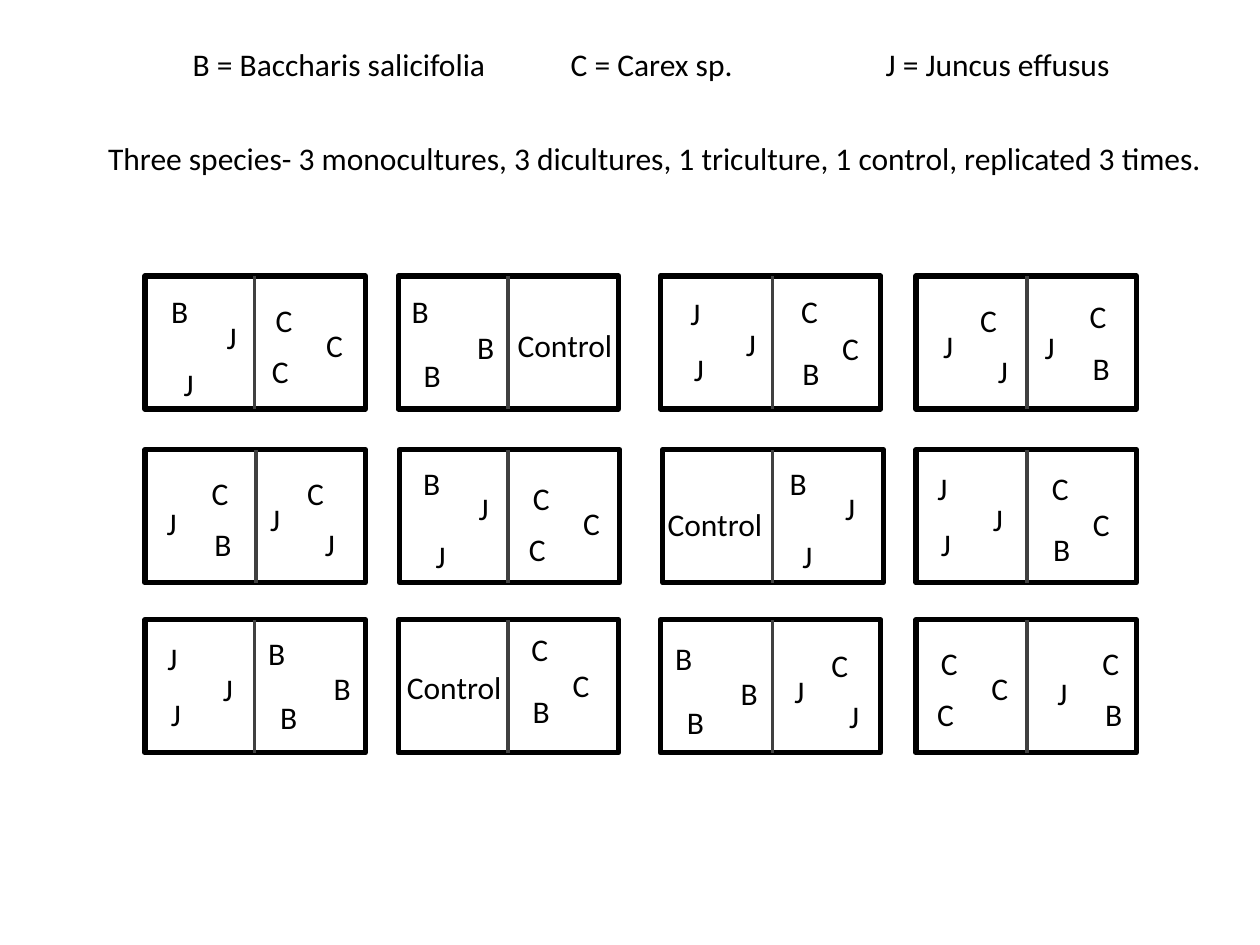
"""Build the planting layout slide: twelve split plots, eight treatments, three replicates."""
import pptx
import pptx.dml.color
import pptx.enum.shapes
import pptx.enum.text
import pptx.oxml.ns
import pptx.util
from lxml import etree

Pt = pptx.util.Pt
COLORS = {"text": "000000", "border": "000000", "divider": "404040"}
LABEL_WIDTHS = {"B": 24.5, "C": 24.5, "J": 20.2, "Control": 70}
PLOT_WIDTH, PLOT_HEIGHT = 126, 76

ROW_TOPS = [157.7, 257, 354.2]
PLOT_LEFTS = [
    [82.8, 227.5, 377.3, 523.4],
    [82.8, 228.2, 378.7, 523.4],
    [82.8, 227.5, 377.3, 523.4],
]
DIVIDER_XS = [
    [145.4, 290.2, 441.4, 586.8],
    [146.2, 290.2, 441.4, 586.8],
    [145.4, 290.2, 441.4, 586.8],
]

PATTERNS = {
    "BJJ": [("B", 0, 0), ("J", 31.7, 14.6), ("J", 7.2, 41.8)],
    "CCC": [("C", 0, 0), ("C", 28.8, 14.4), ("C", -2.2, 29.2)],
    "BBB": [("B", 0, 0), ("B", 37.4, 20.4), ("B", 6.8, 36.7)],
    "JJJ": [("J", 0, 0), ("J", 31.7, 17.8), ("J", 2, 32.4)],
    "CCB": [("C", 0, 0), ("C", 23.5, 20.9), ("B", 0.7, 35.3)],
    "CJB": [("C", 0, 0), ("J", -25.7, 17.5), ("B", 1.7, 29.5)],
    "CJJ": [("C", 0, 0), ("J", -21.2, 14.8), ("J", 10.1, 29.2)],
    "Control": [("Control", 0, 0)],
}
REPLICATES = {
    "BJJ": [(90.7, 163.4), (234.7, 261.4), (444.2, 261.4)],
    "CCC": [(150.5, 168.5), (297.4, 270), (530.6, 364.3)],
    "BBB": [(228.2, 163.4), (146.2, 358.6), (378.7, 361.4)],
    "JJJ": [(387.4, 164.2), (528.5, 264.2), (88.6, 361.4)],
    "CCB": [(450.7, 163.4), (594, 264.2), (296.6, 356.4)],
    "CJB": [(113.8, 267.1), (615.6, 166.3), (622.8, 364.3)],
    "CJJ": [(553, 168.5), (168.5, 267.1), (468, 365.8)],
    "Control": [(288.7, 182.9), (374.4, 285.1), (225.4, 378)],
}


def rgb(role):
    return pptx.dml.color.RGBColor.from_string(COLORS[role])


def add_label(text, left, top, width, wrap=False):
    label = slide.shapes.add_textbox(Pt(left), Pt(top), Pt(width), Pt(29))
    label.text_frame.word_wrap = wrap
    label.text_frame.auto_size = pptx.enum.text.MSO_AUTO_SIZE.SHAPE_TO_FIT_TEXT
    label.text_frame.text = text
    paragraph = label.text_frame.paragraphs[0]
    for run in paragraph.runs:
        run.font.name = "Calibri"
        run.font.size = Pt(18)
        run.font.color.rgb = rgb("text")
    return paragraph


presentation = pptx.Presentation()
presentation.slide_width = Pt(720)
presentation.slide_height = Pt(540)
slide = presentation.slides.add_slide(presentation.slide_layouts[6])

for top, lefts in zip(ROW_TOPS, PLOT_LEFTS):
    for left in lefts:
        plot = slide.shapes.add_shape(
            pptx.enum.shapes.MSO_SHAPE.RECTANGLE,
            Pt(left), Pt(top), Pt(PLOT_WIDTH), Pt(PLOT_HEIGHT))
        plot.shadow.inherit = False
        plot.fill.background()
        plot.line.color.rgb = rgb("border")
        plot.line.width = Pt(3)

for top, divider_xs in zip(ROW_TOPS, DIVIDER_XS):
    for x in divider_xs:
        divider = slide.shapes.add_connector(
            pptx.enum.shapes.MSO_CONNECTOR.STRAIGHT,
            Pt(x), Pt(top + PLOT_HEIGHT), Pt(x), Pt(top))
        divider.line.color.rgb = rgb("divider")
        divider.line.width = Pt(2)
        etree.SubElement(divider.element.spPr, pptx.oxml.ns.qn("a:effectLst"))

legend = add_label(
    "B = Baccharis salicifolia\tC = Carex sp.\tJ = Juncus effusus",
    103, 22.3, 580, wrap=True)
tab_stops = etree.SubElement(
    legend._p.get_or_add_pPr(), pptx.oxml.ns.qn("a:tabLst"))
for position in (216, 396):
    etree.SubElement(tab_stops, pptx.oxml.ns.qn("a:tab"),
                     pos=str(Pt(position)), algn="l")

add_label(
    "Three species- 3 monocultures, 3 dicultures, 1 triculture, 1 control, "
    "replicated 3 times.", 54.7, 75.6, 665.3, wrap=True)

for treatment, origins in REPLICATES.items():
    for origin_x, origin_y in origins:
        for plant, dx, dy in PATTERNS[treatment]:
            add_label(plant, origin_x + dx, origin_y + dy, LABEL_WIDTHS[plant])

presentation.save("out.pptx")
